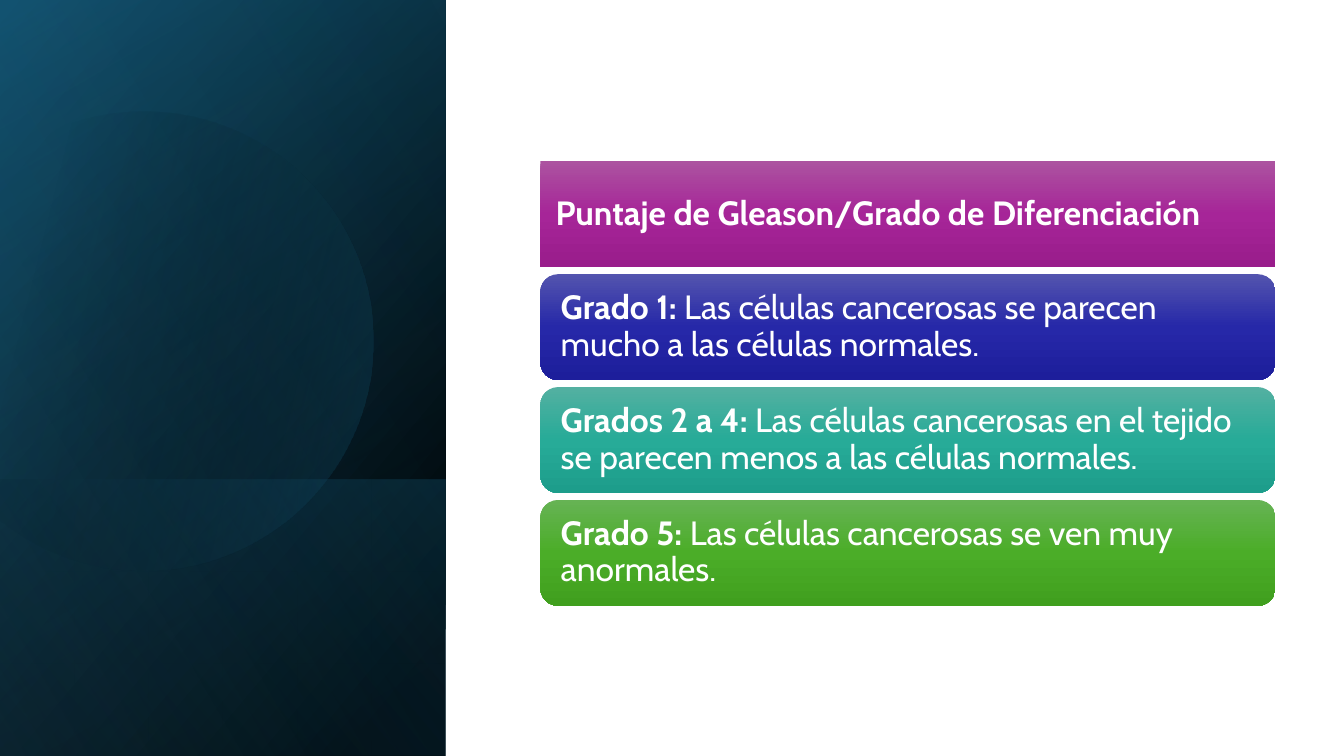
from math import cos, radians, sin

from lxml.etree import SubElement
from pptx import Presentation
from pptx.dml.color import RGBColor
from pptx.enum.shapes import MSO_SHAPE as Shape
from pptx.enum.text import MSO_ANCHOR as Anchor, MSO_AUTO_SIZE as AutoSize, PP_ALIGN as Align
from pptx.oxml.ns import qn
from pptx.util import Inches, Pt

FONT = "Cabin"
TILT = 16.1
CARD_LEFT, CARD_TOP, CARD_WIDTH, CARD_HEIGHT, CARD_GAP = 5.36, 1.6, 7.29, 1.05, 0.07

PANEL_LAYERS = [
    ((-1.54, 1.54, 7.5, 4.42), [(8, "000000", 100), (100, "104862", 100)], 50),
    ((-1.54, 1.54, 7.5, 4.42), [(0, "000000", 0), (99, "156082", 46)], 30),
    ((0.84, 3.92, 2.74, 4.42), [(2, "156082", 29), (100, "000000", 30)], 130),
]
SHEEN = ((-1.54, 1.54, 7.5, 4.42), [(0, "000000", 0), (99, "46B1E1", 11)], 120)

HEADING = ("Puntaje de Gleason/Grado de Diferenciación", "", ("AC53A0", "A62598", "991C8B"))
GRADES = [
    ("Grado 1:", " Las células cancerosas se parecen mucho a las células normales.",
     ("5354AE", "2628A8", "1D1E9B")),
    ("Grados 2 a 4:", " Las células cancerosas en el tejido se parecen menos a las células normales.",
     ("53B0A1", "27AB98", "1D9D8B")),
    ("Grado 5:", " Las células cancerosas se ven muy anormales.",
     ("66B354", "4BAD28", "409F1E")),
]


def rgb(value):
    return RGBColor.from_string(value)


def fill_gradient(shape, stops, angle):
    gradient = SubElement(shape.element.spPr, qn("a:gradFill"), rotWithShape="1")
    stop_list = SubElement(gradient, qn("a:gsLst"))
    for position, colour, opacity in stops:
        stop = SubElement(stop_list, qn("a:gs"), pos=str(position * 1000))
        tint = SubElement(stop, qn("a:srgbClr"), val=colour)
        if opacity < 100:
            SubElement(tint, qn("a:alpha"), val=str(opacity * 1000))
    SubElement(gradient, qn("a:lin"), ang=str(angle * 60000), scaled="0")
    shape.line.fill.background()


def add_panel_layer(slide, box, stops, angle):
    layer = slide.shapes.add_shape(Shape.RECTANGLE, *map(Inches, box))
    layer.shadow.inherit = False
    fill_gradient(layer, stops, angle)
    layer.rotation = 90
    layer.element.spPr.find(qn("a:xfrm")).set("flipH", "1")


def add_cut_disc(slide, radius=2.28, half_arc=133.5, steps=120):
    angles = [radians(TILT - half_arc + 2 * half_arc * i / steps) for i in range(steps + 1)]
    rim = [(Inches(radius * cos(a)), Inches(radius * sin(a))) for a in angles]
    outline = slide.shapes.build_freeform(*rim[0])
    outline.add_line_segments(rim[1:], close=True)
    disc = outline.convert_to_shape()
    disc.left, disc.top = Inches(-0.55), Inches(1.06)
    disc.rotation = 360 - TILT
    disc.shadow.inherit = False
    fill_gradient(disc, [(29, "000000", 0), (100, "156082", 43)], 30)


def card_box(row):
    top = CARD_TOP + row * (CARD_HEIGHT + CARD_GAP)
    return [Inches(n) for n in (CARD_LEFT, top, CARD_WIDTH, CARD_HEIGHT)]


def add_run(paragraph, text, bold):
    run = paragraph.add_run()
    run.text = text
    run.font.name = FONT
    run.font.size = Pt(24)
    run.font.bold = bold
    run.font.color.rgb = rgb("FFFFFF")


def format_card(card, label, description, shades):
    fill_gradient(card, list(zip((0, 50, 100), shades, (100, 100, 100))), 90)
    frame = card.text_frame
    frame.word_wrap = True
    frame.auto_size = AutoSize.NONE
    frame.vertical_anchor = Anchor.MIDDLE
    frame.margin_left = frame.margin_right = Inches(0.15)
    frame.margin_top = frame.margin_bottom = Inches(0.1)
    paragraph = frame.paragraphs[0]
    paragraph.alignment = Align.LEFT
    paragraph.line_spacing = 0.9
    add_run(paragraph, label, True)
    if description:
        add_run(paragraph, description, False)


def place_heading(slide):
    heading = slide.shapes.title
    heading.left, heading.top, heading.width, heading.height = card_box(0)
    geometry = SubElement(heading.element.spPr, qn("a:prstGeom"), prst="roundRect")
    SubElement(geometry, qn("a:avLst"))
    format_card(heading, *HEADING)


def add_grade(slide, row, grade):
    card = slide.shapes.add_shape(Shape.ROUNDED_RECTANGLE, *card_box(row))
    card.shadow.inherit = False
    format_card(card, *grade)


def main():
    deck = Presentation()
    deck.slide_width, deck.slide_height = Inches(13.33), Inches(7.5)
    slide = deck.slides.add_slide(deck.slide_layouts[5])
    for layer in PANEL_LAYERS:
        add_panel_layer(slide, *layer)
    add_cut_disc(slide)
    add_panel_layer(slide, *SHEEN)
    place_heading(slide)
    for row, grade in enumerate(GRADES, start=1):
        add_grade(slide, row, grade)
    deck.save("out.pptx")


if __name__ == "__main__":
    main()
